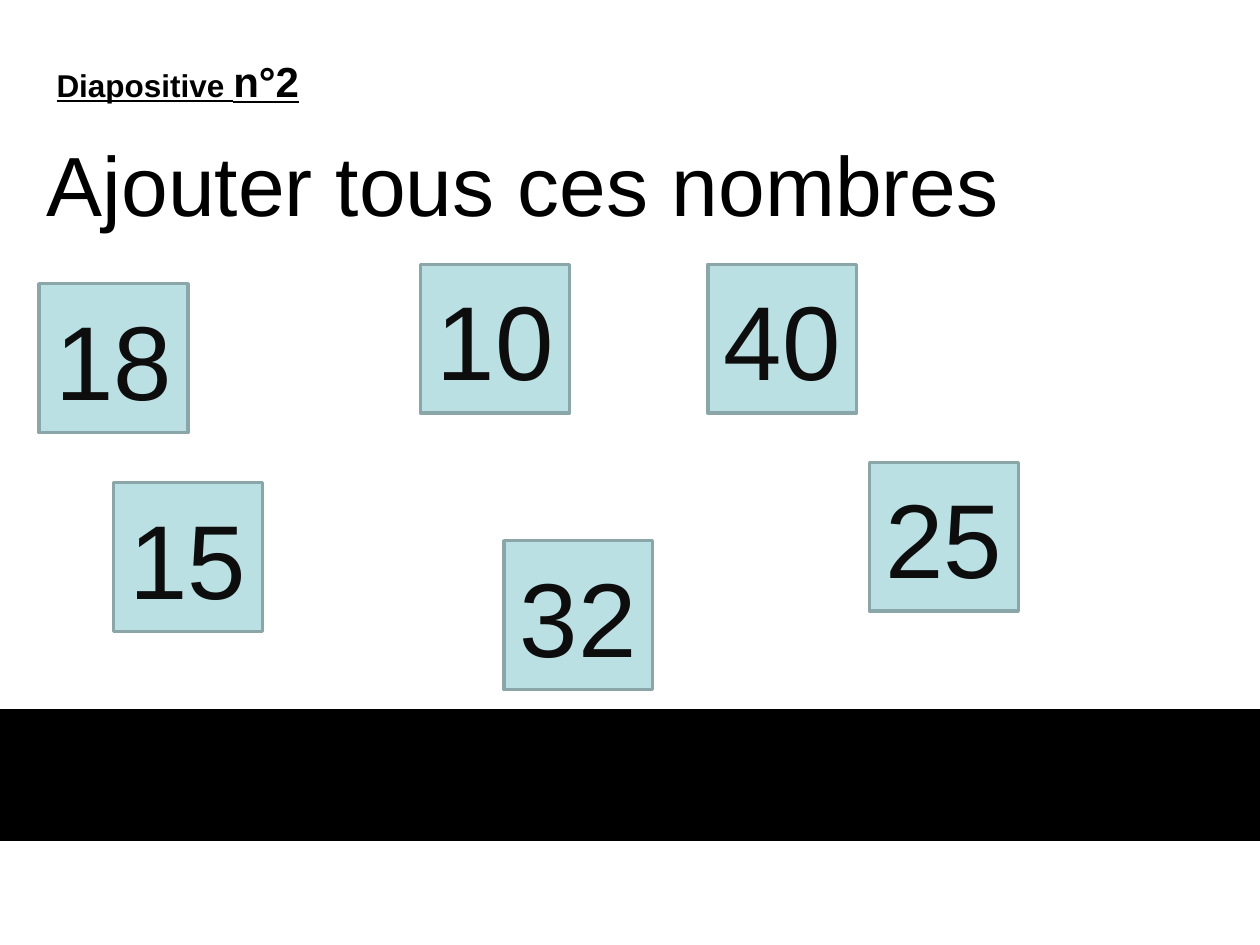
from pptx import Presentation
from pptx.dml.color import RGBColor
from pptx.enum.shapes import MSO_SHAPE as Shape
from pptx.enum.text import MSO_ANCHOR as Anchor, MSO_AUTO_SIZE as Fit, PP_ALIGN as Align
from pptx.util import Cm, Pt

BLACK = RGBColor(0, 0, 0)
INK = RGBColor(0x0D, 0x0D, 0x0D)
AQUA = RGBColor(0xBB, 0xE0, 0xE3)
TEAL = RGBColor(0x8A, 0xA6, 0xA8)

SIDE = 3
CARDS = [
    ("18", 0.79, 5.72),
    ("15", 2.29, 9.73),
    ("25", 17.53, 9.32),
    ("40", 14.27, 5.33),
    ("10", 8.48, 5.33),
    ("32", 10.16, 10.9),
]


def write(para, text, size, color=BLACK, align=Align.LEFT, bold=False, line=False):
    para.alignment = align
    run = para.add_run()
    run.text = text
    font = run.font
    font.name = "Arial"
    font.size = Pt(size)
    font.color.rgb = color
    font.bold = bold
    font.underline = line


def add_rect(slide, left, top, width, height, fill, edge):
    rect = slide.shapes.add_shape(
        Shape.RECTANGLE, Cm(left), Cm(top), Cm(width), Cm(height))
    rect.shadow.inherit = False
    rect.fill.solid()
    rect.fill.fore_color.rgb = fill
    rect.line.color.rgb = edge
    rect.line.width = Pt(2)
    return rect


def add_card(slide, text, left, top):
    frame = add_rect(slide, left, top, SIDE, SIDE, AQUA, TEAL).text_frame
    frame.vertical_anchor = Anchor.MIDDLE
    write(frame.paragraphs[0], text, 60, color=INK, align=Align.CENTER)


def add_label(slide):
    box = slide.shapes.add_textbox(Cm(0.89), Cm(0.99), Cm(12.19), Cm(1.3))
    frame = box.text_frame
    frame.word_wrap = True
    frame.auto_size = Fit.SHAPE_TO_FIT_TEXT
    para = frame.paragraphs[0]
    para.space_before = Pt(3)
    write(para, "Diapositive ", 18, bold=True, line=True)
    write(para, "n°2", 24, bold=True, line=True)


def set_title(slide):
    title = slide.shapes.title
    title.left, title.top = Cm(0.69), Cm(1.65)
    title.width, title.height = Cm(21.59), Cm(4.09)
    frame = title.text_frame
    frame.vertical_anchor = Anchor.MIDDLE
    write(frame.paragraphs[0], "Ajouter tous ces nombres", 48)


def main():
    deck = Presentation()
    deck.slide_width, deck.slide_height = Cm(25.4), Cm(19.05)
    slide = deck.slides.add_slide(deck.slide_layouts[5])
    add_label(slide)
    add_rect(slide, 0, 14.33, 25.4, 2.59, BLACK, BLACK)
    set_title(slide)
    for text, left, top in CARDS:
        add_card(slide, text, left, top)
    deck.save("out.pptx")


if __name__ == "__main__":
    main()
